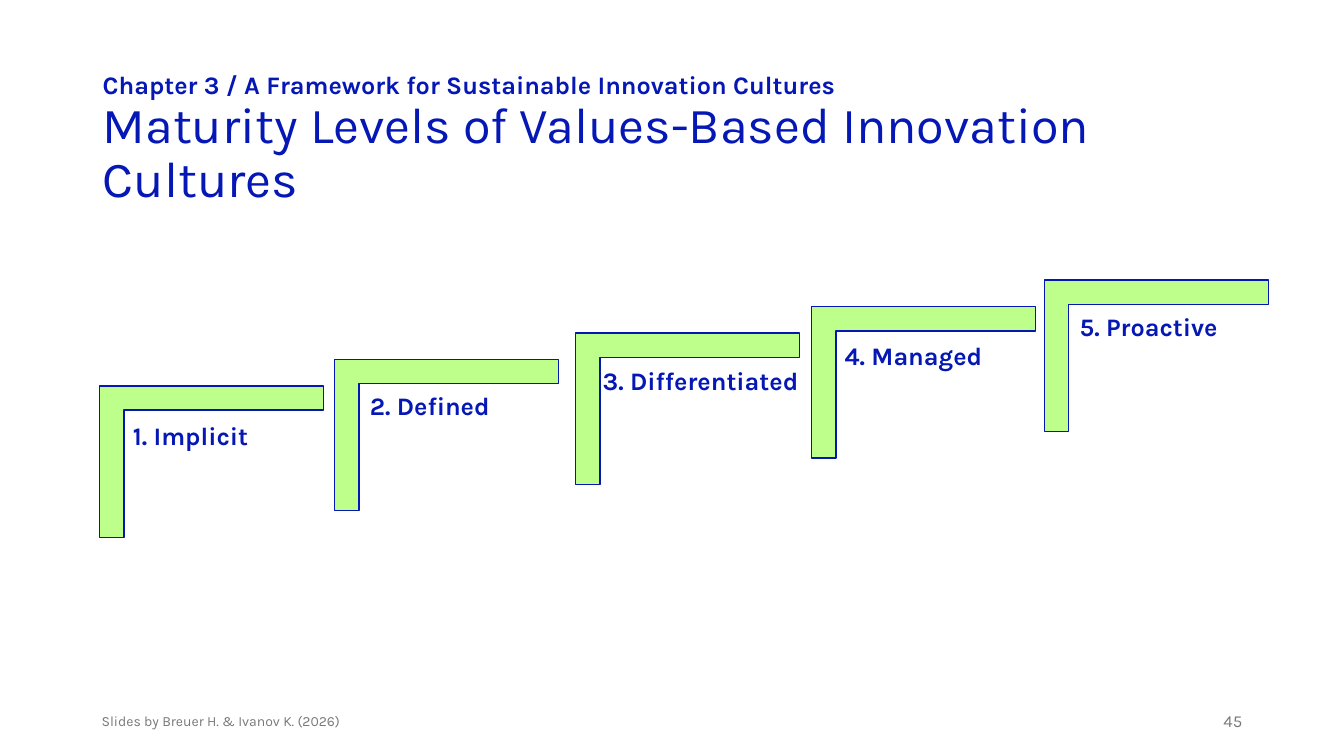
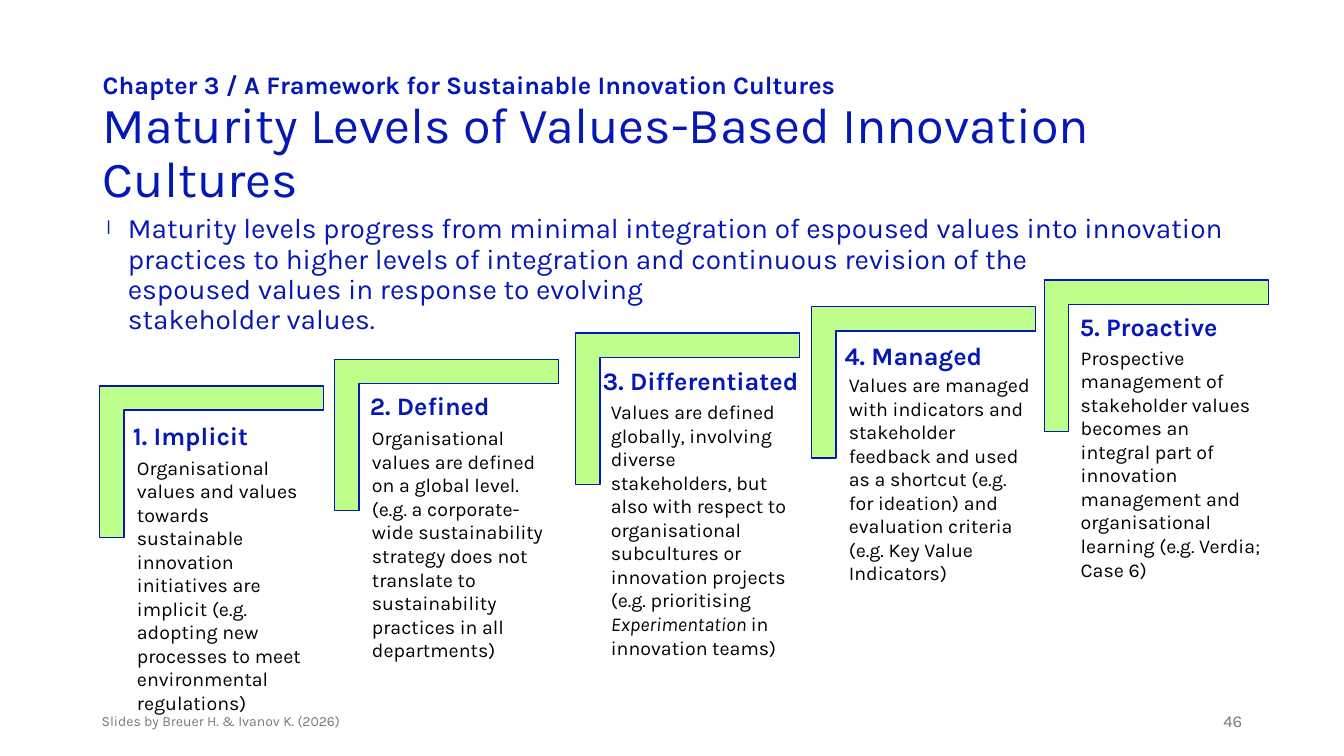
from lxml import etree
from pptx import Presentation
from pptx import util as u
from pptx.dml.color import RGBColor
from pptx.enum import shapes, text
from pptx.oxml import ns

PX = 9144
BLUE = RGBColor(0x05, 0x17, 0xB5)
GREEN = RGBColor(0xBE, 0xFF, 0x8C)
GRAY = RGBColor(0x79, 0x79, 0x79)
BLACK = RGBColor(0, 0, 0)
FONT = "Karla"

CHAPTER = "Chapter 3 / A Framework for Sustainable Innovation Cultures"
HEADING = "Maturity Levels of Values-Based Innovation Cultures"
CREDIT = "Slides by Breuer H. & Ivanov K. (2026)"
SUMMARY = [
    "Maturity levels progress from minimal integration of espoused values into innovation "
    "practices to higher levels of integration and continuous revision of the",
    "espoused values in response to evolving",
    "stakeholder values.",
]

CORNER_WIDTH, CORNER_HEIGHT = 150, 222
FIRST_TOP, LAST_TOP = 347, 242

LEVELS = [
    {"corner": 135, "label": ("1. Implicit", 122, 412, 143), "detail_at": (126, 447, 201, 222),
     "detail": [("Organisational values and values towards sustainable innovation initiatives are "
                 "implicit (e.g. adopting new processes to meet environmental regulations)", False)]},
    {"corner": 368, "label": ("2. Defined", 357, 382, 142), "detail_at": (359, 418, 201, 246),
     "detail": [("Organisational values are defined on a global level. (e.g. a corporate-wide "
                 "sustainability strategy does not translate to sustainability practices in all "
                 "departments)", False)]},
    {"corner": 607, "label": ("3. Differentiated", 588, 358, 263), "detail_at": (596, 392, 201, 269),
     "detail": [("Values are defined globally, involving diverse stakeholders, but also with respect "
                 "to organisational subcultures or innovation projects (e.g. prioritising ", False),
                ("Experimentation ", True), ("in innovation teams)", False)]},
    {"corner": 841, "label": ("4. Managed", 828, 333, 157), "detail_at": (832, 365, 201, 222),
     "detail": [("Values are managed with indicators and stakeholder feedback and used as a shortcut "
                 "(e.g. for ideation) and evaluation criteria (e.g. Key Value Indicators)", False)]},
    {"corner": 1072, "label": ("5. Proactive", 1061, 304, 162), "detail_at": (1062, 338, 201, 222),
     "detail": [("Prospective management of stakeholder values becomes an integral part of innovation "
                 "management and organisational learning (e.g. Verdia; Case 6)", False)]},
]

PAGES = [{"number": "45", "detailed": False}, {"number": "46", "detailed": True}]


def emu(*lengths):
    return [u.Emu(round(length * PX)) for length in lengths]


def add_box(parent, at, anchor=text.MSO_ANCHOR.TOP):
    box = parent.add_textbox(*emu(*at))
    box.text_frame.word_wrap = True
    box.text_frame.vertical_anchor = anchor
    return box.text_frame.paragraphs[0]


def add_span(para, words, size, color, bold=False, italic=False):
    span = para.add_run()
    span.text = words
    font = span.font
    font.name, font.size, font.bold, font.italic = FONT, u.Pt(size), bold, italic
    font.color.rgb = color


def add_title(page):
    para = add_box(page.shapes, (92, 67, 1150, 145), text.MSO_ANCHOR.MIDDLE)
    para.line_spacing = 0.9
    add_span(para, CHAPTER, 18, BLUE, bold=True)
    para.add_line_break()
    add_span(para, HEADING, 36, BLUE)


def add_summary(page):
    para = add_box(page.shapes, (92, 208, 1150, 109))
    para.line_spacing = 0.9
    props = para._p.get_or_add_pPr()
    props.set("marL", str(25 * PX))
    props.set("indent", str(-25 * PX))
    color = etree.SubElement(props, ns.qn("a:buClr"))
    etree.SubElement(color, ns.qn("a:srgbClr")).set("val", str(BLUE))
    etree.SubElement(props, ns.qn("a:buChar")).set("char", "│")
    for index, line in enumerate(SUMMARY):
        if index:
            para.add_line_break()
        add_span(para, line, 20, BLUE)


def add_detail(page, level):
    para = add_box(page.shapes, level["detail_at"])
    for words, italic in level["detail"]:
        add_span(para, words, 14, BLACK, italic=italic)


def add_step(page, index, level):
    group = page.shapes.add_group_shape().shapes
    top = FIRST_TOP + (LAST_TOP - FIRST_TOP) * index / (len(LEVELS) - 1)
    corner = group.add_shape(shapes.MSO_SHAPE.CORNER,
                             *emu(level["corner"], top, CORNER_WIDTH, CORNER_HEIGHT))
    corner.rotation = 90
    corner.adjustments[0] = corner.adjustments[1] = 0.16
    corner.shadow.inherit = False
    corner.fill.solid()
    corner.fill.fore_color.rgb = GREEN
    corner.line.color.rgb = BLUE
    corner.line.width = u.Pt(1)
    name, left, label_top, width = level["label"]
    add_span(add_box(group, (left, label_top, width, 40)), name, 18, BLUE, bold=True)


def add_footer(page, number):
    para = add_box(page.shapes, (942, 695, 300, 40), text.MSO_ANCHOR.MIDDLE)
    para.alignment = text.PP_ALIGN.RIGHT
    add_span(para, number, 12, GRAY)
    para = add_box(page.shapes, (91, 695, 450, 40), text.MSO_ANCHOR.MIDDLE)
    add_span(para, CREDIT, 10, GRAY)


def main():
    deck = Presentation()
    deck.slide_width, deck.slide_height = emu(1333, 750)
    for content in PAGES:
        page = deck.slides.add_slide(deck.slide_layouts[6])
        add_title(page)
        if content["detailed"]:
            add_summary(page)
            for level in LEVELS:
                add_detail(page, level)
        for index, level in enumerate(LEVELS):
            add_step(page, index, level)
        add_footer(page, content["number"])
    deck.save("out.pptx")


if __name__ == "__main__":
    main()
